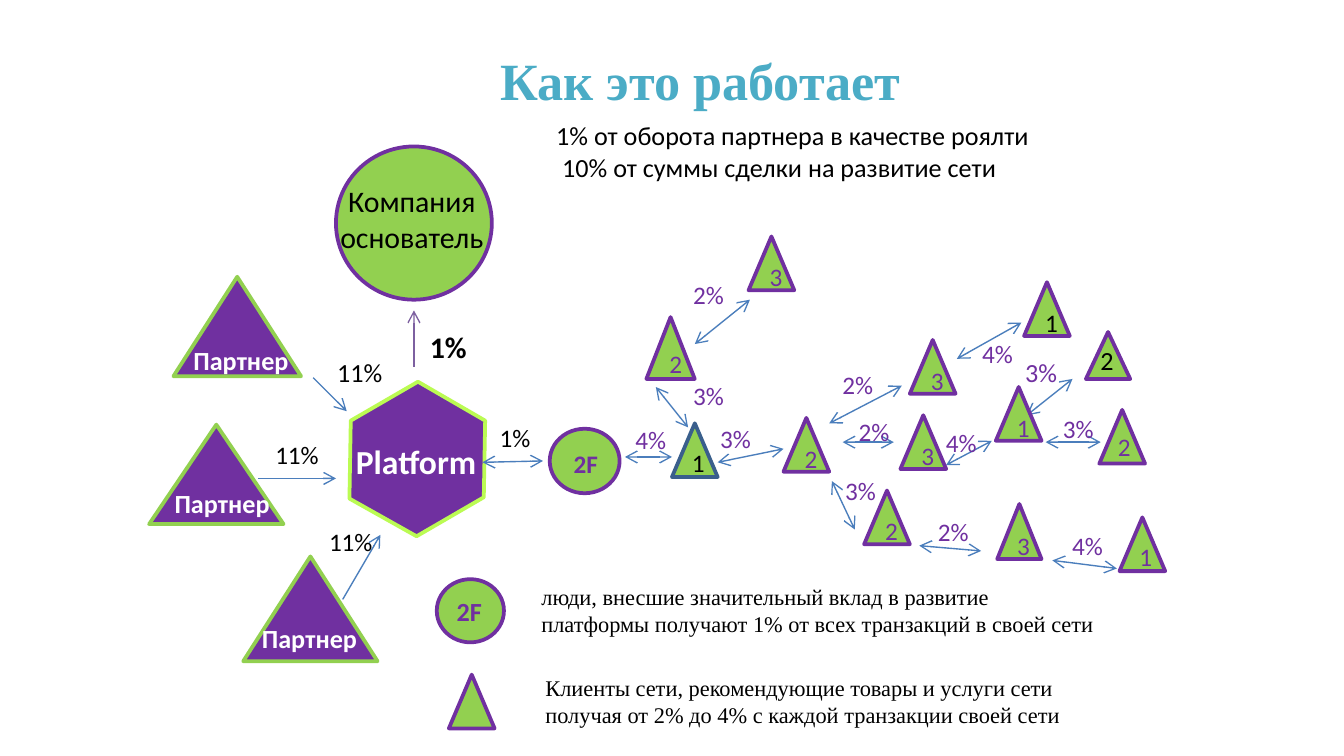
"""Build a slide that explains how a partner referral network pays out."""
import pptx
import pptx.dml.color
import pptx.enum.shapes
import pptx.enum.text
import pptx.util
from lxml import etree
from pptx.oxml.ns import qn

Inches = pptx.util.Inches
Pt = pptx.util.Pt
RGBColor = pptx.dml.color.RGBColor
MSO_SHAPE = pptx.enum.shapes.MSO_SHAPE
PP_ALIGN = pptx.enum.text.PP_ALIGN
MSO_ANCHOR = pptx.enum.text.MSO_ANCHOR

PURPLE = RGBColor(0x70, 0x30, 0xA0)
GREEN = RGBColor(0x92, 0xD0, 0x50)
LIME = RGBColor(0xBB, 0xFB, 0x53)
TEAL = RGBColor(0x4B, 0xAC, 0xC6)
BLUE = RGBColor(0x4B, 0x7E, 0xBC)
NAVY = RGBColor(0x3A, 0x5F, 0x8C)
VIOLET = RGBColor(0x7D, 0x60, 0xA0)
BLACK = RGBColor(0, 0, 0)
WHITE = RGBColor(0xFF, 0xFF, 0xFF)

HEXAGON = [(2.6, 3.71), (2.61, 3.13), (3.11, 2.84),
           (3.61, 3.13), (3.6, 3.7), (3.1, 3.99)]

PARTNERS = [
    (1.29, 2.06, 0.95, 0.74, 1.34, 2.51),
    (1.11, 3.16, 1, 0.74, 1.2, 3.58),
    (1.81, 4.14, 1, 0.78, 1.85, 4.58),
]

PARTNER_ARROWS = [
    (2.33, 2.81, 2.58, 3.06),
    (1.92, 3.56, 2.5, 3.56),
    (2.55, 4.46, 2.83, 3.98),
]

NETWORK_ARROWS = [
    (3.59, 3.44, 4.04, 3.43),
    (4.65, 3.4, 5, 3.4),
    (5.34, 3.44, 5.83, 3.34),
    (6.27, 3.29, 6.65, 3.29),
    (7.04, 3.46, 7.38, 3.28),
    (7.64, 3.09, 7.98, 2.82),
    (7.78, 3.29, 8.19, 3.29),
    (6.19, 3.58, 6.36, 3.94),
    (6.84, 4.06, 7.3, 4.1),
    (7.83, 4.17, 8.31, 4.23),
    (6.17, 3.15, 6.71, 2.87),
    (7.12, 2.67, 7.6, 2.4),
    (4.88, 2.88, 5.12, 3.18),
    (5.58, 2.23, 5.17, 2.56),
]

CLIENTS = [
    ("2", 5.83, 3.11, 0.34, 0.4, PURPLE),
    ("2", 4.81, 2.36, 0.36, 0.46, PURPLE),
    ("3", 6.7, 3.09, 0.34, 0.4, PURPLE),
    ("2", 6.43, 3.65, 0.34, 0.4, PURPLE),
    ("3", 7.42, 3.75, 0.33, 0.41, PURPLE),
    ("3", 6.77, 2.53, 0.34, 0.4, PURPLE),
    ("1", 7.41, 2.88, 0.34, 0.4, PURPLE),
    ("3", 5.57, 1.76, 0.34, 0.4, PURPLE),
    ("1", 7.62, 2.1, 0.34, 0.4, BLACK),
]

PLAIN_CLIENTS = [
    (8.08, 2.47, 0.33, 0.35),
    (8.18, 3.05, 0.34, 0.4),
    (8.33, 3.85, 0.34, 0.4),
    (3.34, 5.02, 0.34, 0.4),
]

CIRCLES = [
    (2.5, 1.09, 1.16, 1.14),
    (4.09, 3.19, 0.52, 0.48),
    (3.25, 4.31, 0.5, 0.47),
]

NETWORK_LABELS = [
    ("2", 8.22, 3.16), ("1", 8.38, 3.98),
    ("3%", 5.26, 3.1), ("3%", 5.06, 2.78), ("2%", 6.17, 2.7),
    ("2%", 6.29, 3.05), ("2%", 6.88, 3.79), ("2%", 5.06, 2.03),
    ("4%", 4.63, 3.11), ("4%", 6.94, 3.13), ("3%", 7.81, 3.03),
    ("3%", 6.19, 3.49), ("4%", 7.21, 2.47), ("4%", 7.88, 3.9),
]

BLACK_LABELS = [
    ("1", 5.05, 3.28), ("1%", 3.62, 3.09),
    ("11%", 1.95, 3.22), ("11%", 2.35, 3.87),
]

LARGER_LABELS = [
    ("2", 8.09, 2.51, BLACK),
    ("11%", 2.41, 2.6, BLACK),
    ("3%", 7.53, 2.6, PURPLE),
]


def format_text(tf, size, color, bold=False, font="Calibri"):
    """Apply one style to every run of a text frame."""
    for p in tf.paragraphs:
        for r in p.runs:
            r.font.size = Pt(size)
            r.font.name = font
            r.font.bold = bold
            r.font.color.rgb = color


def add_label(s, text, x, y, w=0.6, h=0.33, size=13.5, color=BLACK,
              bold=False, font="Calibri", align=PP_ALIGN.LEFT):
    """Add a wrapping text box."""
    tf = s.shapes.add_textbox(Inches(x), Inches(y), Inches(w), Inches(h)).text_frame
    tf.word_wrap = True
    tf.text = text
    for p in tf.paragraphs:
        p.alignment = align
    format_text(tf, size, color, bold, font)


def paint(sp, fill, line):
    """Give a shape a flat fill and a two-point outline."""
    sp.shadow.inherit = False
    sp.fill.solid()
    sp.fill.fore_color.rgb = fill
    sp.line.color.rgb = line
    sp.line.width = Pt(2)


def add_figure(s, kind, x, y, w, h, fill=GREEN, line=PURPLE):
    """Add a painted preset shape."""
    sp = s.shapes.add_shape(kind, Inches(x), Inches(y), Inches(w), Inches(h))
    paint(sp, fill, line)
    return sp


def add_client(s, text, x, y, w, h, color):
    """Add a client triangle with its level number."""
    tf = add_figure(s, MSO_SHAPE.ISOSCELES_TRIANGLE, x, y, w, h).text_frame
    tf.text = text
    tf.vertical_anchor = MSO_ANCHOR.MIDDLE
    tf.paragraphs[0].alignment = PP_ALIGN.CENTER
    format_text(tf, 13.5, color)


def add_arrow(s, x1, y1, x2, y2, ends=("tailEnd",), color=BLUE):
    """Add a thin line with open arrowheads at the given ends."""
    cn = s.shapes.add_connector(pptx.enum.shapes.MSO_CONNECTOR.STRAIGHT,
                                Inches(x1), Inches(y1), Inches(x2), Inches(y2))
    cn.line.color.rgb = color
    cn.line.width = Pt(0.75)
    ln = cn.line._get_or_add_ln()
    for end in ends:
        etree.SubElement(ln, qn(f"a:{end}"), type="arrow")
    etree.SubElement(cn._element.spPr, qn("a:effectLst"))


def add_platform(s):
    """Add the platform hexagon and its name."""
    points = [(Inches(x), Inches(y)) for x, y in HEXAGON]
    builder = s.shapes.build_freeform(*points[0])
    builder.add_line_segments(points[1:], close=True)
    paint(builder.convert_to_shape(), PURPLE, LIME)
    add_label(s, "Platform", 2.55, 3.23, 1.2, 0.4, 18, WHITE, True)


def add_title(s, text):
    """Place and format the title."""
    sp = s.shapes.title
    sp.left, sp.top, sp.width, sp.height = map(Inches, (2.58, 0.32, 5.26, 0.54))
    tf = sp.text_frame
    tf.text = text
    tf.vertical_anchor = MSO_ANCHOR.MIDDLE
    tf.paragraphs[0].alignment = PP_ALIGN.CENTER
    format_text(tf, 28, TEAL, True, "Times New Roman")


def main():
    """Build and save the slide."""
    prs = pptx.Presentation()
    prs.slide_width = Inches(10)
    prs.slide_height = prs.slide_width * 9 // 16
    s = prs.slides.add_slide(prs.slide_layouts[5])
    add_title(s, "Как это работает")
    add_platform(s)
    for box in CIRCLES:
        add_figure(s, MSO_SHAPE.OVAL, *box)
    for ends in NETWORK_ARROWS:
        add_arrow(s, *ends, ends=("headEnd", "tailEnd"))
    add_figure(s, MSO_SHAPE.ISOSCELES_TRIANGLE, 5, 3.15, 0.34, 0.4, line=NAVY)
    for client in CLIENTS:
        add_client(s, *client)
    for box in PLAIN_CLIENTS:
        add_figure(s, MSO_SHAPE.ISOSCELES_TRIANGLE, *box)
    for x, y, w, h, text_x, text_y in PARTNERS:
        add_figure(s, MSO_SHAPE.ISOSCELES_TRIANGLE, x, y, w, h, PURPLE, GREEN)
        add_label(s, "Партнер", text_x, text_y, 0.95, 0.34, 14, WHITE, True)
    for ends in PARTNER_ARROWS:
        add_arrow(s, *ends)
    add_arrow(s, 3.08, 2.73, 3.08, 2.31, color=VIOLET)
    for label in NETWORK_LABELS:
        add_label(s, *label, color=PURPLE)
    for label in BLACK_LABELS:
        add_label(s, *label)
    for text, x, y, color in LARGER_LABELS:
        add_label(s, text, x, y, size=14, color=color)
    for x, y, size in ((4.17, 3.29, 13.5), (3.3, 4.38, 14)):
        add_label(s, "2F", x, y, size=size, color=PURPLE, bold=True)
    add_label(s, "1%", 3.1, 2.4, 0.71, 0.37, 16, bold=True)
    add_label(s, "Компания\nоснователь", 2.4, 1.31, 1.33, 0.64, 16,
              align=PP_ALIGN.CENTER)
    add_label(s, "1% от оборота партнера в качестве роялти\n"
              " 10% от суммы сделки на развитие сети", 4.04, 0.84, 4.49, 0.58, 14)
    for text, x, y in (
            ("люди, внесшие значительный вклад в развитие\n"
             "платформы получают 1% от всех транзакций в своей сети", 3.93, 4.29),
            ("Клиенты сети, рекомендующие товары и услуги сети\n"
             "получая от 2% до 4% с каждой транзакции своей сети", 3.96, 4.97)):
        add_label(s, text, x, y, 4.6, 0.5, 12, font="Times New Roman")
    prs.save("out.pptx")


if __name__ == "__main__":
    main()
